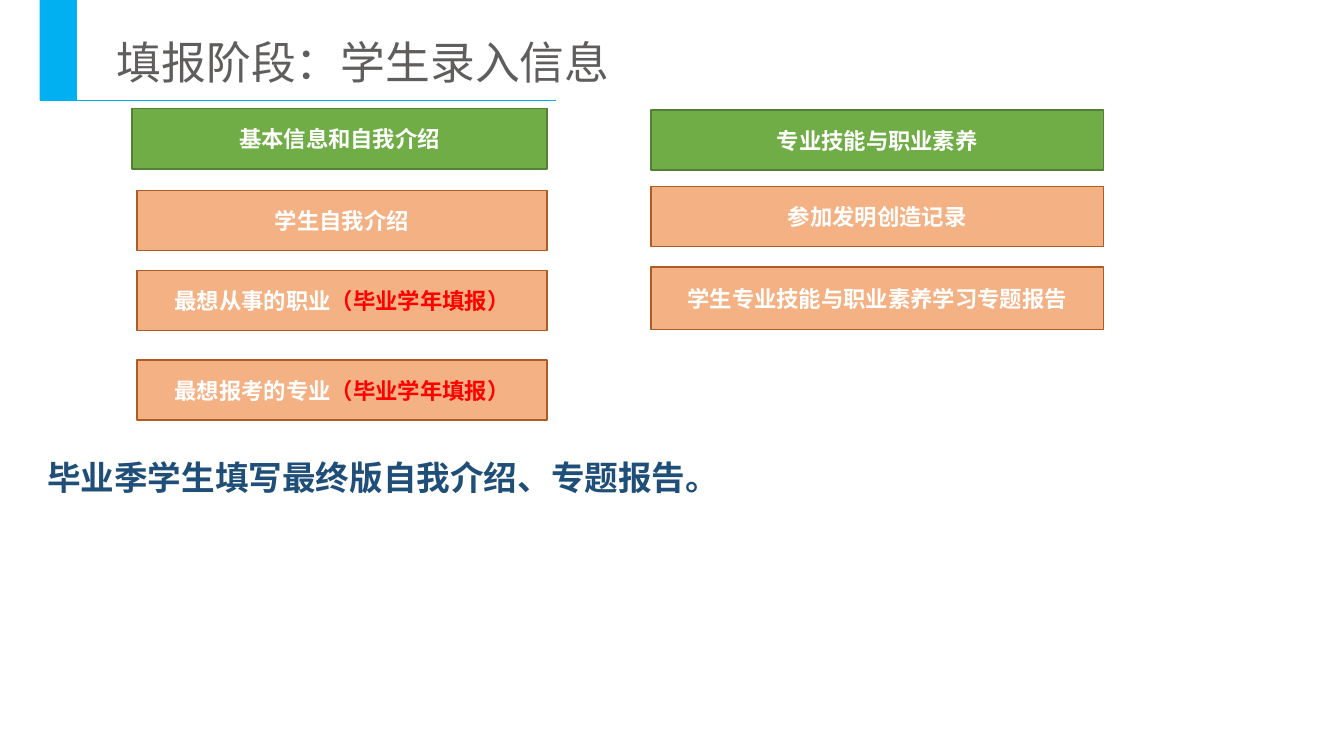
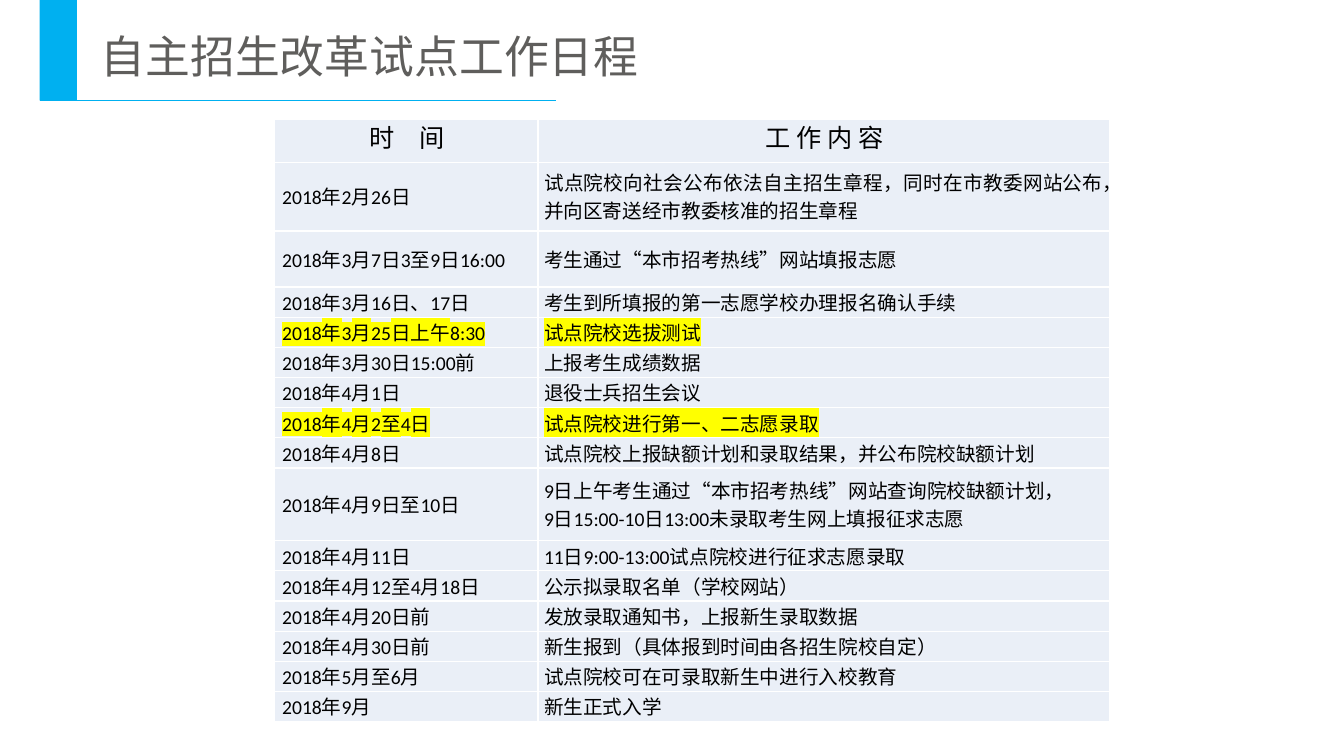
"""Build two slides: what students fill in, and the admission schedule."""
from lxml.etree import SubElement
from pptx import Presentation
from pptx.dml.color import RGBColor
from pptx.enum.shapes import MSO_CONNECTOR, MSO_SHAPE
from pptx.enum.text import MSO_ANCHOR, MSO_AUTO_SIZE, PP_ALIGN
from pptx.oxml.ns import qn
from pptx.util import Cm, Pt

HUES = {
    "sky": "00B0F0", "gray": "5F5E5C", "navy": "1F4E79", "white": "FFFFFF",
    "black": "000000", "red": "FF0000", "green": "70AD47", "moss": "538035",
    "peach": "F4B183", "rust": "AF5C24", "pale": "EAEFF7", "yellow": "FFFF00",
}
SANS, LATIN = "Noto Sans CJK SC", "Calibri"

FORM = {
    "title": ("填报阶段：学生录入信息", 2.69, 0.74),
    "note": "毕业季学生填写最终版自我介绍、专题报告。",
    "boxes": [
        ("head", "基本信息和自我介绍", 3.33, 2.74, 10.46, 1.52),
        ("item", "学生自我介绍", 3.45, 4.8, 10.34, 1.52),
        ("item", "最想从事的职业|（毕业学年填报）", 3.45, 6.81, 10.34, 1.52),
        ("item", "最想报考的专业|（毕业学年填报）", 3.45, 9.07, 10.34, 1.52),
        ("head", "专业技能与职业素养", 16.41, 2.77, 11.4, 1.52),
        ("item", "参加发明创造记录", 16.41, 4.7, 11.4, 1.52),
        ("item", "学生专业技能与职业素养学习专题报告", 16.41, 6.73, 11.4, 1.57),
    ],
}
LOOKS = {"head": ("green", "moss"), "item": ("peach", "rust")}

PLAN = {
    "title": ("自主招生改革试点工作日程", 2.29, 0.61),
    "head": ("时　间", "工 作 内 容"),
    "rows": [
        ("2018年2月26日", "试点院校向社会公布依法自主招生章程，同时在市教委网站公布，并向区寄送经市教委核准的招生章程"),
        ("2018年3月7日3至9日16:00", "考生通过“本市招考热线”网站填报志愿"),
        ("2018年3月16日、17日", "考生到所填报的第一志愿学校办理报名确认手续"),
        ("2018年3月25日上午8:30", "试点院校选拔测试"),
        ("2018年3月30日15:00前", "上报考生成绩数据"),
        ("2018年4月1日", "退役士兵招生会议"),
        ("2018年4月2至4日", "试点院校进行第一、二志愿录取"),
        ("2018年4月8日", "试点院校上报缺额计划和录取结果，并公布院校缺额计划"),
        ("2018年4月9日至10日", "9日上午考生通过“本市招考热线”网站查询院校缺额计划，\n9日15:00-10日13:00未录取考生网上填报征求志愿"),
        ("2018年4月11日", "11日9:00-13:00试点院校进行征求志愿录取"),
        ("2018年4月12至4月18日", "公示拟录取名单（学校网站）"),
        ("2018年4月20日前", "发放录取通知书，上报新生录取数据"),
        ("2018年4月30日前", "新生报到（具体报到时间由各招生院校自定）"),
        ("2018年5月至6月", "试点院校可在可录取新生中进行入校教育"),
        ("2018年9月", "新生正式入学"),
    ],
    "marked": {4, 7},
    "tall": {0: 1.07, 1: 1.73, 2: 1.4, 9: 1.83},
    "row": 0.76,
    "cols": (6.65, 14.4),
}


def rgb(name):
    return RGBColor.from_string(HUES[name])


def put(frame, text, size=16, color="white", bold=False, font=SANS,
        align=None, lead=None, indent=0, mark=None):
    frame.word_wrap = True
    for row, line in enumerate(text.split("\n")):
        para = frame.add_paragraph() if row else frame.paragraphs[0]
        para.alignment = align
        if lead:
            para.line_spacing = Pt(lead)
        if indent:
            para._p.get_or_add_pPr().set("indent", str(Cm(indent)))
        for part, hue in zip(line.split("|"), (color, "red")):
            run = para.add_run()
            run.text = part
            run.font.size, run.font.bold, run.font.name = Pt(size), bold, font
            run.font.color.rgb = rgb(hue)
            props = run._r.get_or_add_rPr()
            props.set("lang", "zh-CN")
            SubElement(props, qn("a:ea"), typeface=SANS)
            if mark:
                glow = SubElement(props, qn("a:highlight"))
                SubElement(glow, qn("a:srgbClr"), val=HUES[mark])
                props.find(qn("a:latin")).addprevious(glow)


def rect(slide, spot, fill, edge=None):
    box = slide.shapes.add_shape(MSO_SHAPE.RECTANGLE, *map(Cm, spot))
    box.shadow.inherit = False
    box.fill.solid()
    box.fill.fore_color.rgb = rgb(fill)
    if edge:
        box.line.color.rgb, box.line.width = rgb(edge), Pt(1)
    else:
        box.line.fill.background()
    return box


def label(slide, text, spot, **style):
    frame = slide.shapes.add_textbox(*map(Cm, spot)).text_frame
    put(frame, text, **style)
    frame.auto_size = MSO_AUTO_SIZE.SHAPE_TO_FIT_TEXT


def title(slide, text, left, top):
    label(slide, text, (left, top, 17.5, 1.63), size=32, color="gray")


def brand(layout, slide):
    for holder in list(layout.placeholders):
        layout.shapes.element.remove(holder.element)
    band = rect(slide, (1, 0, 0.94, 2.53), "sky")
    rule = slide.shapes.add_connector(
        MSO_CONNECTOR.STRAIGHT, Cm(1), Cm(2.53), Cm(14), Cm(2.53))
    rule.line.color.rgb, rule.line.width = rgb("sky"), Pt(0.5)
    SubElement(rule.element.spPr, qn("a:effectLst"))
    for shape in (band, rule):
        layout.shapes.element.append(shape.element)


def paint(cell):
    props = cell._tc.get_or_add_tcPr()
    for side in ("lnL", "lnR", "lnT", "lnB"):
        line = SubElement(props, qn("a:" + side), w=str(Pt(1)))
        fill = SubElement(line, qn("a:solidFill"))
        SubElement(fill, qn("a:srgbClr"), val=HUES["white"])
    cell.fill.solid()
    cell.fill.fore_color.rgb = rgb("pale")
    cell.vertical_anchor = MSO_ANCHOR.MIDDLE
    cell.margin_left = cell.margin_right = Cm(0.15)
    cell.margin_top = cell.margin_bottom = 0


def form(slide):
    title(slide, *FORM["title"])
    for kind, text, *spot in FORM["boxes"]:
        frame = rect(slide, spot, *LOOKS[kind]).text_frame
        frame.vertical_anchor = MSO_ANCHOR.MIDDLE
        put(frame, text, bold=True, align=PP_ALIGN.CENTER)
    label(slide, FORM["note"], (0.94, 11.38, 28.14, 1.27),
          size=24, color="navy", bold=True)


def plan(slide):
    title(slide, *PLAN["title"])
    rows = [PLAN["head"], *PLAN["rows"]]
    highs = [PLAN["tall"].get(row, PLAN["row"]) for row in range(len(rows))]
    table = slide.shapes.add_table(
        len(rows), len(PLAN["cols"]), Cm(6.91), Cm(3.02),
        Cm(sum(PLAN["cols"])), Cm(sum(highs))).table
    for col, wide in zip(table.columns, PLAN["cols"]):
        col.width = Cm(wide)
    for row, (texts, high) in enumerate(zip(rows, highs)):
        table.rows[row].height = Cm(high)
        for col, text in enumerate(texts):
            cell = table.cell(row, col)
            paint(cell)
            put(cell.text_frame, text, size=14 if row else 18,
                color="black", font=LATIN, lead=20,
                align=PP_ALIGN.JUSTIFY if row else PP_ALIGN.CENTER,
                indent=0 if row and col else 0.05,
                mark="yellow" if row in PLAN["marked"] else None)


def main():
    deck = Presentation()
    deck.slide_width, deck.slide_height = Cm(33.87), Cm(19.05)
    blank = deck.slide_layouts[6]
    first, second = (deck.slides.add_slide(blank) for _ in range(2))
    brand(blank, first)
    form(first)
    plan(second)
    deck.save("out.pptx")


if __name__ == "__main__":
    main()
